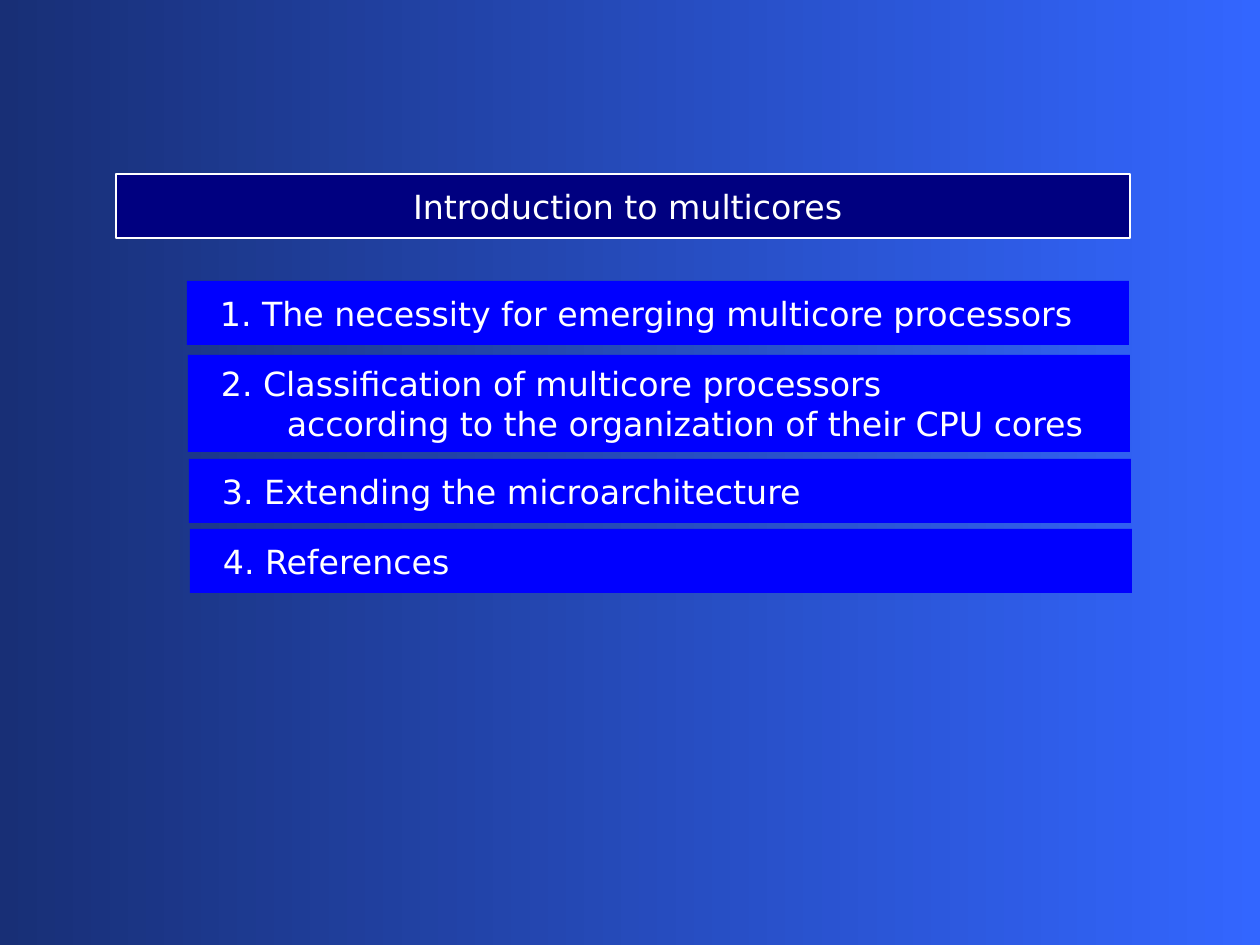
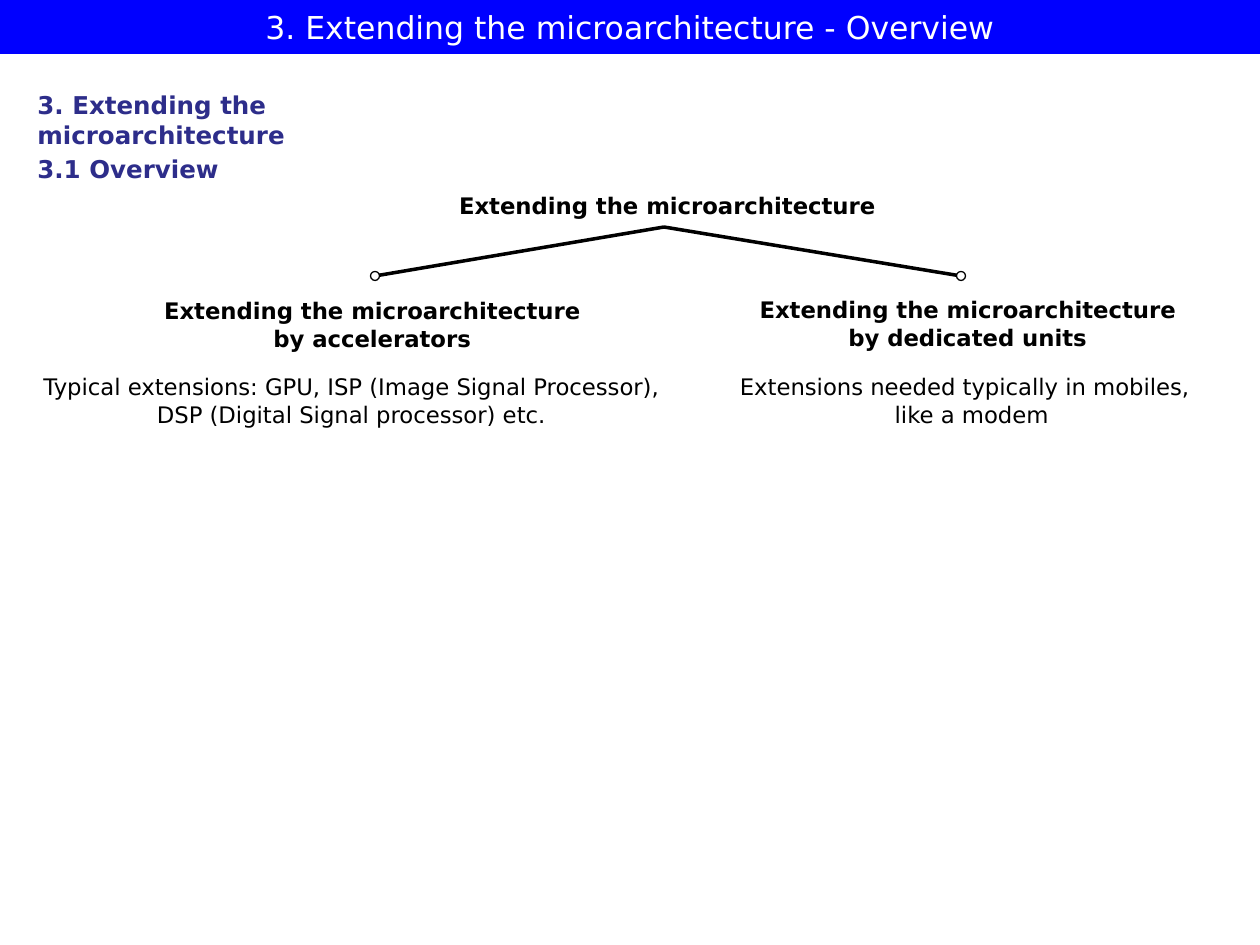
import pptx
import pptx.util
import pptx.dml.color
import pptx.enum.shapes
import pptx.enum.text
import pptx.oxml

PX = 914400 / 126
FONT = "DejaVu Sans"
COLORS = {
    "night": "182F76", "sky": "3366FF", "navy": "000080", "blue": "0000FF",
    "indigo": "2D2D8A", "white": "FFFFFF", "black": "000000",
}
ALIGN = pptx.enum.text.PP_ALIGN
ANCHOR = pptx.enum.text.MSO_ANCHOR
SHAPE = pptx.enum.shapes.MSO_SHAPE
TITLE_ONLY = 5

CHAPTERS = [  # top, height, lines as (text, indent)
    (281, 64, [("1. The necessity for emerging multicore processors", 0)]),
    (355, 97, [("2. Classification of multicore processors", 0),
               ("according to the organization of their CPU cores", 66)]),
    (459, 64, [("3. Extending the microarchitecture", 0)]),
    (529, 64, [("4. References", 0)]),
]
BRANCHES = [  # line end, label box, label lines, note box, note lines
    ((375, 276), (159, 297, 426, 55),
     [("Extending the microarchitecture", 0), ("by accelerators", 0)],
     (17, 367, 668, 68),
     [("Typical extensions: GPU, ISP (Image Signal Processor),", 0),
      ("DSP (Digital Signal processor) etc.", 0)]),
    ((961, 276), (759, 296, 417, 55),
     [("Extending the microarchitecture", 0), ("by dedicated units", 0)],
     (724, 367, 481, 68),
     [("Extensions needed typically in mobiles,", 0), ("like a modem", 14)]),
]


def px(length):
    return pptx.util.Emu(round(length * PX))


def rgb(name):
    return pptx.dml.color.RGBColor.from_string(COLORS[name])


def set_all(target, values):
    for name, value in values.items():
        setattr(target, name, value)


def place(shape, box):
    set_all(shape, dict(zip(("left", "top", "width", "height"), map(px, box))))


def paint(shape, fill, line=None, width=0.75):
    shape.fill.solid()
    shape.fill.fore_color.rgb = rgb(fill)
    if line:
        shape.line.color.rgb = rgb(line)
        shape.line.width = pptx.util.Pt(width)
    else:
        shape.line.fill.background()


def write(shape, lines, size, color, bold=False, align=ALIGN.LEFT,
          anchor=ANCHOR.MIDDLE, space_after=0, **margins):
    """Fill a shape with one paragraph per (text, indent) pair."""
    frame = shape.text_frame
    set_all(frame, {"word_wrap": True, "vertical_anchor": anchor,
                    "auto_size": pptx.enum.text.MSO_AUTO_SIZE.NONE})
    set_all(frame, {f"margin_{side}": px(gap) for side, gap in margins.items()})
    for index, (text, indent) in enumerate(lines):
        para = frame.add_paragraph() if index else frame.paragraphs[0]
        set_all(para, {"alignment": align,
                       "space_after": pptx.util.Pt(space_after)})
        if indent:
            para._p.get_or_add_pPr().set("marL", str(px(indent)))
        span = para.add_run()
        span.text = text
        set_all(span.font, {"name": FONT, "size": pptx.util.Pt(size), "bold": bold})
        span.font.color.rgb = rgb(color)


def add_page(deck, title, box, size, fill, line=None, **margins):
    page = deck.slides.add_slide(deck.slide_layouts[TITLE_ONLY])
    band = page.shapes.title
    place(band, box)
    paint(band, fill, line)
    write(band, [(title, 0)], size, "white", align=ALIGN.CENTER, **margins)
    return page


def add_text(page, box, lines, size, color, **style):
    text_box = page.shapes.add_textbox(*map(px, box))
    write(text_box, lines, size, color, anchor=ANCHOR.TOP, **style)


def add_shape(page, kind, box):
    shape = page.shapes.add_shape(kind, *map(px, box))
    shape.shadow.inherit = False
    return shape


def add_branch_line(page, start, end):
    """Draw a hairline that ends in a small open circle."""
    line = page.shapes.add_connector(
        pptx.enum.shapes.MSO_CONNECTOR.STRAIGHT, *map(px, start + end))
    line.line.color.rgb = rgb("black")
    line.line.width = pptx.util.Pt(0)
    line._element.spPr.append(pptx.oxml.parse_xml(
        '<a:effectLst xmlns:a="http://schemas.openxmlformats.org/drawingml/2006/main"/>'))
    diameter = 9
    left, top = (middle - diameter / 2 for middle in end)
    circle = add_shape(page, SHAPE.OVAL, (left, top, diameter, diameter))
    paint(circle, "white", "black", 0)


def build_contents(deck):
    page = add_page(deck, "Introduction to multicores", (116, 174, 1014, 64), 19,
                    "navy", "white", left=22)
    fill = page.background.fill
    fill.gradient()
    fill.gradient_angle = 0
    for stop, color in zip(fill.gradient_stops, ("night", "sky")):
        stop.color.rgb = rgb(color)
    for index, (top, height, lines) in enumerate(CHAPTERS):
        bar = add_shape(page, SHAPE.RECTANGLE, (187 + index, top, 942, height))
        paint(bar, "blue")
        write(bar, lines, 19, "white", left=33)


def build_overview(deck):
    page = add_page(deck, "3. Extending the microarchitecture - Overview",
                    (0, 0, 1260, 54), 18, "blue")
    add_text(page, (25, 84, 490, 107),
             [("3. Extending the microarchitecture", 0), ("3.1 Overview", 0)],
             14, "indigo", bold=True, space_after=3)
    label_style = {"bold": True, "align": ALIGN.CENTER,
                   "left": 0, "top": 0, "right": 0, "bottom": 0}
    add_text(page, (454, 192, 426, 28), [("Extending the microarchitecture", 0)],
             13, "black", **label_style)
    for end, label_box, label, note_box, note in BRANCHES:
        add_branch_line(page, (664, 227), end)
        add_text(page, label_box, label, 13, "black", **label_style)
        add_text(page, note_box, note, 13, "black", align=ALIGN.CENTER)


def main():
    deck = pptx.Presentation()
    deck.slide_width, deck.slide_height = px(1260), px(945)
    build_contents(deck)
    build_overview(deck)
    deck.save("out.pptx")


if __name__ == "__main__":
    main()
